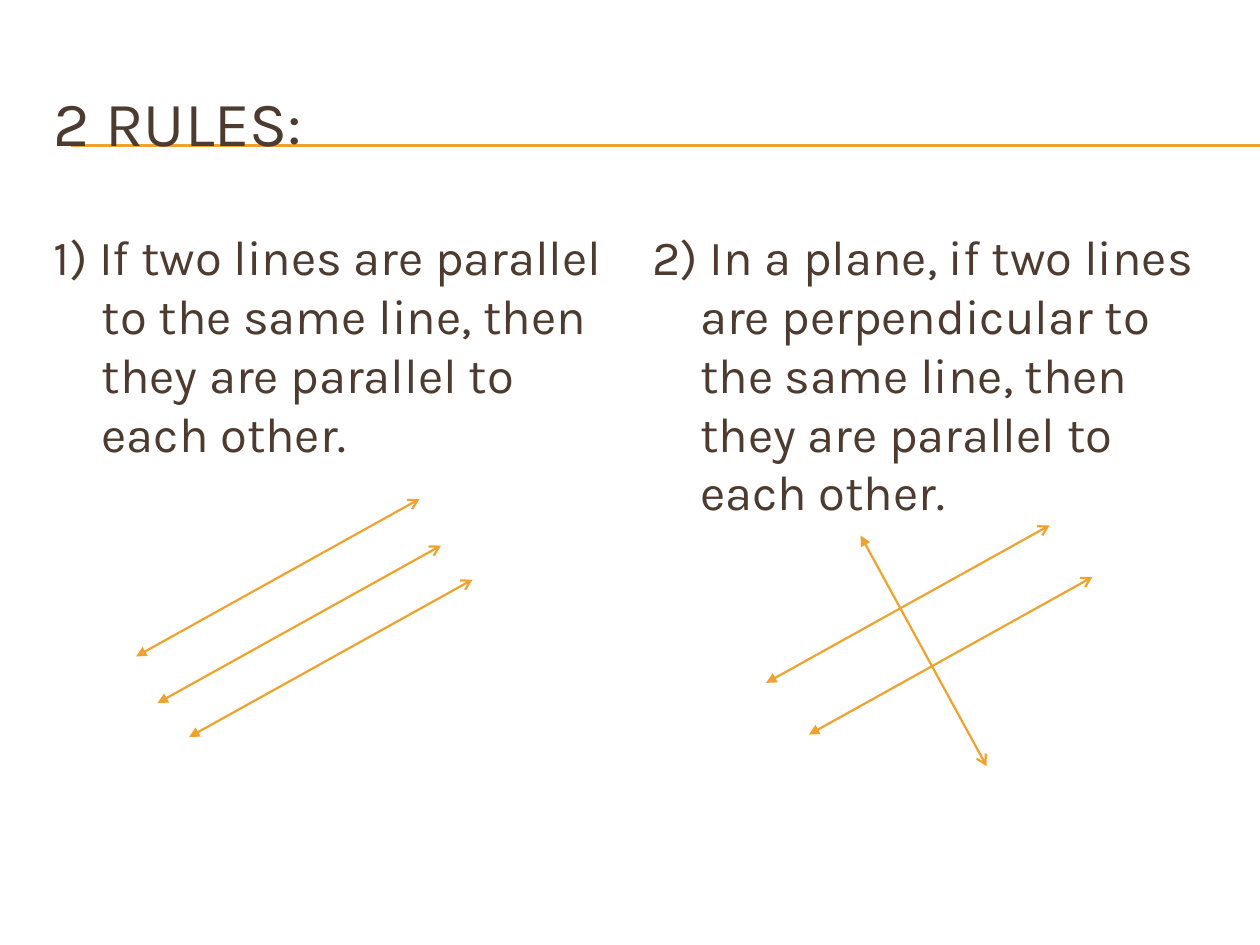
from typing import NamedTuple

from lxml.etree import SubElement
from pptx import Presentation
from pptx.dml.color import RGBColor
from pptx.enum.shapes import MSO_CONNECTOR as Link
from pptx.enum.text import MSO_ANCHOR as Anchor
from pptx.oxml.ns import qn
from pptx.slide import Slide
from pptx.util import Inches, Pt

BROWN = RGBColor(0x4E, 0x3B, 0x30)
GOLD = RGBColor(0xF0, 0xA2, 0x2E)
FONT = "Karla"


class Block(NamedTuple):
    text: str
    left: float
    top: float
    width: float
    height: float
    size: int = 28
    indent: float = 0.38
    before: float = 5.6
    anchor: Anchor = Anchor.TOP


class Line(NamedTuple):
    x: float
    y: float
    dx: float = 2.25
    dy: float = -1.25
    weight: float = 1.25
    arrows: bool = True


RULES = [Line(0.56, y, 9.44, 0, 0.75, False) for y in (1.15, 1.16)]
BLOCKS = [
    Block("2 RULES:", 0.33, 0.5, 9.5, 0.92, 36, 0, 0, Anchor.MIDDLE),
    Block("1) If two lines are parallel to the same line, "
          "then they are parallel to each other.", 0.33, 1.75, 4.58, 5.17),
    Block("2) In a plane, if two lines are perpendicular to the same line, "
          "then they are parallel to each other.", 5.08, 1.75, 4.75, 5.17),
]
TRIO = [Line(1.08, 5.21), Line(1.25, 5.58), Line(1.5, 5.85)]
CROSS = [Line(6.08, 5.42), Line(6.42, 5.83), Line(6.83, 4.25, 1, 1.83)]


def draw_line(slide: Slide, line: Line) -> None:
    link = slide.shapes.add_connector(
        Link.STRAIGHT, Inches(line.x), Inches(line.y),
        Inches(line.x + line.dx), Inches(line.y + line.dy))
    link.line.color.rgb = GOLD
    link.line.width = Pt(line.weight)
    props = link.line._get_or_add_ln()
    if line.arrows:
        SubElement(props, qn("a:headEnd"), type="triangle")
        SubElement(props, qn("a:tailEnd"), type="arrow")
    SubElement(props.getparent(), qn("a:effectLst"))


def draw_text(slide: Slide, block: Block) -> None:
    box = slide.shapes.add_textbox(
        Inches(block.left), Inches(block.top),
        Inches(block.width), Inches(block.height))
    frame = box.text_frame
    frame.word_wrap = True
    frame.vertical_anchor = block.anchor
    para = frame.paragraphs[0]
    para.space_before = Pt(block.before)
    props = para._p.get_or_add_pPr()
    props.set("marL", str(Inches(block.indent)))
    props.set("indent", str(-Inches(block.indent)))
    run = para.add_run()
    run.text = block.text
    run.font.name = FONT
    run.font.size = Pt(block.size)
    run.font.color.rgb = BROWN


def main() -> None:
    deck = Presentation()
    deck.slide_width, deck.slide_height = Inches(10), Inches(7.5)
    slide = deck.slides.add_slide(deck.slide_layouts[6])
    for line in RULES:
        draw_line(slide, line)
    for block in BLOCKS:
        draw_text(slide, block)
    for line in TRIO + CROSS:
        draw_line(slide, line)
    deck.save("out.pptx")


if __name__ == "__main__":
    main()
